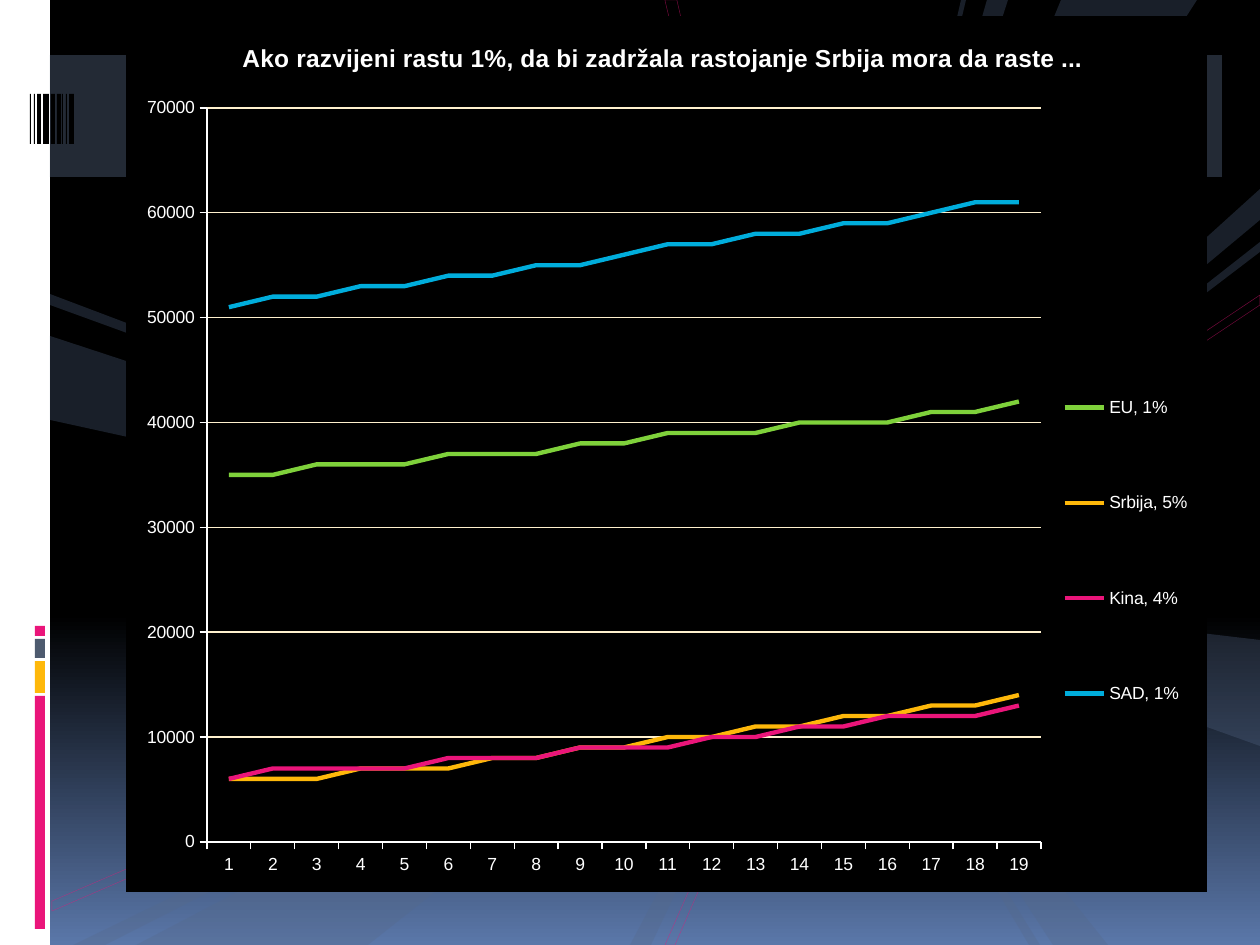
from lxml import etree
from pptx import Presentation
from pptx.chart.data import CategoryChartData
from pptx.dml.color import RGBColor
from pptx.enum.chart import XL_CHART_TYPE, XL_LEGEND_POSITION, XL_TICK_MARK
from pptx.enum.shapes import MSO_SHAPE
from pptx.oxml import parse_xml
from pptx.oxml.ns import nsdecls, qn
from pptx.util import Pt

LINE_CHART = XL_CHART_TYPE.LINE
LEGEND_RIGHT = XL_LEGEND_POSITION.RIGHT
TICK_OUT, TICK_NONE = XL_TICK_MARK.OUTSIDE, XL_TICK_MARK.NONE
RECT = MSO_SHAPE.RECTANGLE
PX = 914400 / 126
WIDTH, HEIGHT = 1260, 945
FONT = "Arial"
WHITE, BLACK, PINK, AMBER, SLATE = "FFFFFF", "000000", "EA157A", "FEB80A", "4E5B6F"

# Chart content: name, first value, yearly growth, colour
TITLE = "Ako razvijeni rastu 1%, da bi zadržala rastojanje Srbija mora da raste ..."
YEARS = range(1, 20)
ECONOMIES = [
    ("EU, 1%", 34870, 0.01, "7FD13B"),
    ("Srbija, 5%", 5850, 0.05, AMBER),
    ("Kina, 4%", 6390, 0.04, PINK),
    ("SAD, 1%", 51160, 0.01, "00ADDC"),
]
CHART_BOX = (126, 16, 1081, 876)
PLOT_BOX = (207, 108, 834, 734)
LEGEND_BOX = (1052, 322, 148, 457)
TITLE_POINT = (238, 38)

# Backdrop: side strip, its colour marks (top, height) and barcode (left, width)
SIDE_STRIP = (0, 0, 50, HEIGHT)
MARKS = [(696, 233, PINK), (661, 32, AMBER), (639, 19, SLATE), (626, 10, PINK)]
BARCODE = [(43, 6), (37, 4), (34, 1), (30, 1), (51, 4), (57, 4), (62, 1), (66, 1), (69, 5)]
BAND = (50, 55, 1172, 122)
HUB = (819, 588)
PINK_OUTLINES = [
    [(665, 945), (822, 588), (1260, 295), (1260, 305), (828, 593), (675, 945)],
    [(52, 901), (52, 911), (811, 583), (677, 0), (665, 0), (803, 578)],
]
RAYS = [
    [(966, 0), (830, 573), (961, 0)],
    [(1061, 0), (1197, 0), HUB],
    [HUB, (1260, 640), (1260, 746)],
    [(1008, 0), HUB, (987, 0)],
    [(1053, 945), (1108, 945), (820, 585)],
    [(1040, 945), HUB, (1029, 945)],
    [(1260, 189), (1260, 220), HUB],
    [(1260, 242), HUB, (1260, 252)],
    [(136, 945), HUB, (368, 945)],
    [(73, 945), (809, 588), (105, 945)],
    [(50, 336), (816, 588), (50, 420)],
    [(50, 294), (828, 588), (50, 305)],
    [(630, 945), (651, 945), HUB],
]


def px(length):
    return round(length * PX)


def rgb(color):
    return RGBColor.from_string(color)


def set_alpha(shape, percent):
    color = next(shape._element.spPr.iter(qn("a:srgbClr")))
    etree.SubElement(color, qn("a:alpha")).set("val", str(percent * 1000))


def fill_shape(shape, color, alpha=100):
    shape.shadow.inherit = False
    shape.line.fill.background()
    shape.fill.solid()
    shape.fill.fore_color.rgb = rgb(color)
    if alpha < 100:
        set_alpha(shape, alpha)


def add_rect(slide, box, color, alpha=100):
    fill_shape(slide.shapes.add_shape(RECT, *map(px, box)), color, alpha)


def add_polygon(slide, points):
    builder = slide.shapes.build_freeform(*points[0], scale=PX)
    builder.add_line_segments(points[1:], close=True)
    return builder.convert_to_shape()


def format_font(font, size=10, color=WHITE, bold=False):
    font.name, font.size, font.bold = FONT, Pt(size), bold
    font.color.rgb = rgb(color)


def add_text(frame, text, **text_format):
    run = frame.paragraphs[0].add_run()
    run.text = text
    format_font(run.font, **text_format)


def style_line(line, color, width):
    line.color.rgb = rgb(color)
    line.width = Pt(width)


def set_layout(part, index, left, top, width=None, height=None, inner=False):
    """Give a chart part a fixed place, as shares of the chart's box."""
    for old in part.findall(qn("c:layout")):
        part.remove(old)
    chart_left, chart_top, chart_width, chart_height = CHART_BOX
    values = [("layoutTarget", "inner")] if inner else []
    values += [("xMode", "edge"), ("yMode", "edge"),
               ("x", round((left - chart_left) / chart_width, 4)),
               ("y", round((top - chart_top) / chart_height, 4))]
    if width:
        values += [("w", round(width / chart_width, 4)), ("h", round(height / chart_height, 4))]
    layout = etree.Element(qn("c:layout"))
    manual = etree.SubElement(layout, qn("c:manualLayout"))
    for tag, value in values:
        etree.SubElement(manual, qn("c:" + tag)).set("val", str(value))
    part.insert(index, layout)


def chart_fill(color):
    return parse_xml(f'<c:spPr {nsdecls("c", "a")}><a:solidFill><a:srgbClr val="{color}"/>'
                     '</a:solidFill><a:ln><a:noFill/></a:ln></c:spPr>')


def add_backdrop(slide):
    # Gradient from black to blue
    background = slide.background.fill
    background.gradient()
    background.gradient_angle = 270
    for stop, position, color in zip(background.gradient_stops, (0.65, 1), (BLACK, "5A77A9")):
        stop.position, stop.color.rgb = position, rgb(color)
    # Side strip with marks
    add_rect(slide, SIDE_STRIP, WHITE)
    for top, height, color in MARKS:
        add_rect(slide, (35, top, 10, height), color)
    # Rays and thin outlines
    for points in PINK_OUTLINES:
        outline = add_polygon(slide, points)
        outline.shadow.inherit = False
        outline.fill.background()
        style_line(outline.line, PINK, 0.25)
        set_alpha(outline, 53)
    for points in RAYS:
        fill_shape(add_polygon(slide, points), "566989", 30)
    # Band and barcode
    add_rect(slide, BAND, "586A86", 40)
    for left, width in BARCODE:
        add_rect(slide, (left, 94, width, 50), BLACK)


def add_growth_chart(slide):
    data = CategoryChartData()
    data.categories = [str(year) for year in YEARS]
    for name, start, growth, _ in ECONOMIES:
        data.add_series(name, [round(start * (1 + growth) ** (year - 1), -3) for year in YEARS])
    chart = slide.shapes.add_chart(LINE_CHART, *map(px, CHART_BOX), data).chart
    format_font(chart.font)

    # Lines
    for series, (*_, color) in zip(chart.plots[0].series, ECONOMIES):
        series.smooth = False
        style_line(series.format.line, color, 2.5)

    # Axes
    for axis in (chart.category_axis, chart.value_axis):
        axis.major_tick_mark, axis.minor_tick_mark = TICK_OUT, TICK_NONE
        style_line(axis.format.line, WHITE, 0.75)
    values = chart.value_axis
    values.minimum_scale, values.maximum_scale, values.major_unit = 0, 70000, 10000
    values.has_major_gridlines = True
    style_line(values.major_gridlines.format.line, "FFF1CE", 0.75)

    # Title and legend
    add_text(chart.chart_title.text_frame, TITLE, size=14, bold=True)
    chart.has_legend = True
    chart.legend.position = LEGEND_RIGHT
    chart.legend.include_in_layout = False

    # Places and fills
    chart_part = chart._chartSpace.find(qn("c:chart"))
    plot_area = chart_part.find(qn("c:plotArea"))
    set_layout(chart_part.find(qn("c:title")), 1, *TITLE_POINT)
    set_layout(chart_part.find(qn("c:legend")), 1, *LEGEND_BOX)
    set_layout(plot_area, 0, *PLOT_BOX, inner=True)
    plot_area.append(chart_fill(BLACK))
    chart_part.addnext(chart_fill(BLACK))


def main():
    deck = Presentation()
    deck.slide_width, deck.slide_height = px(WIDTH), px(HEIGHT)
    slide = deck.slides.add_slide(deck.slide_layouts[6])
    add_backdrop(slide)
    add_growth_chart(slide)
    deck.save("out.pptx")


if __name__ == "__main__":
    main()
